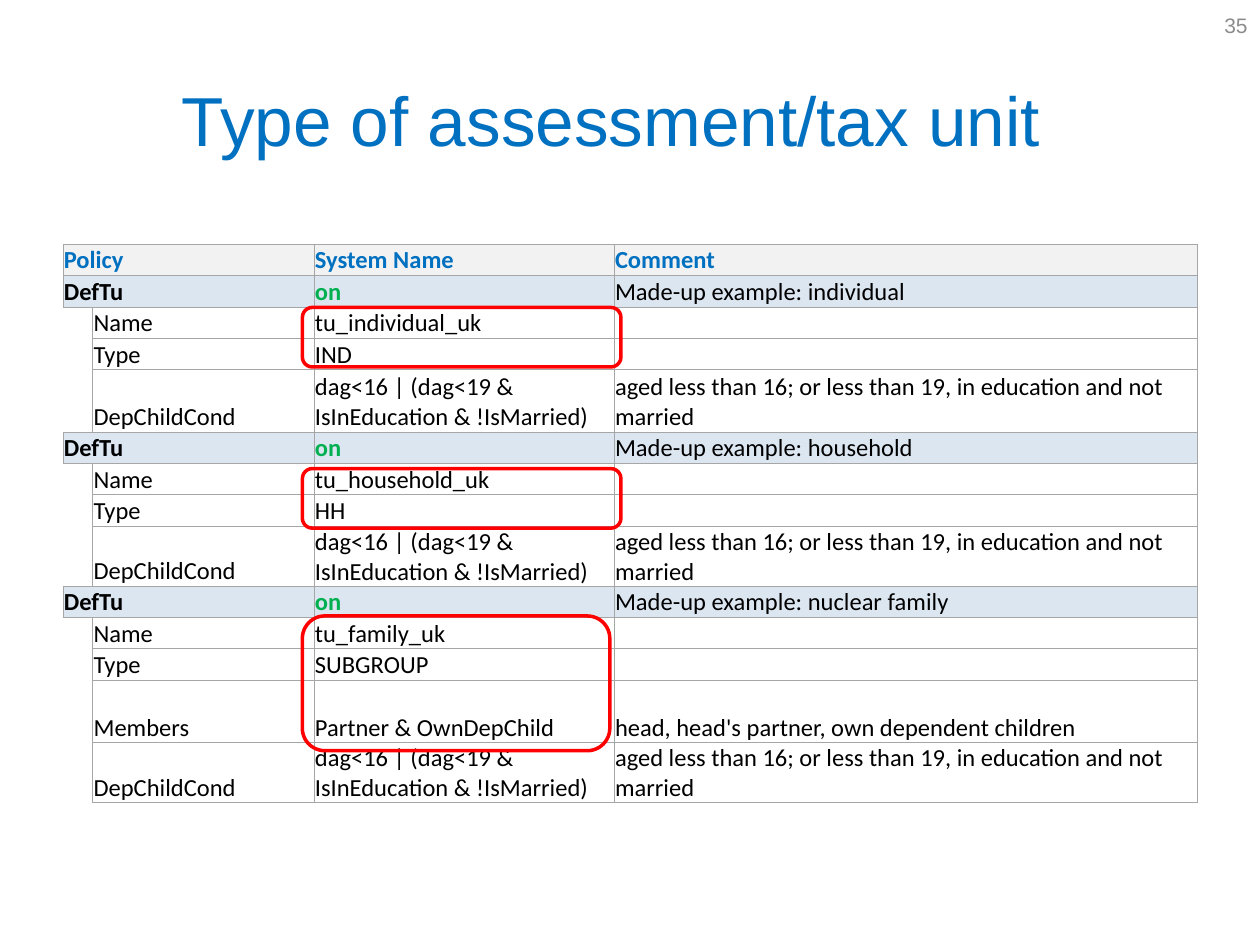
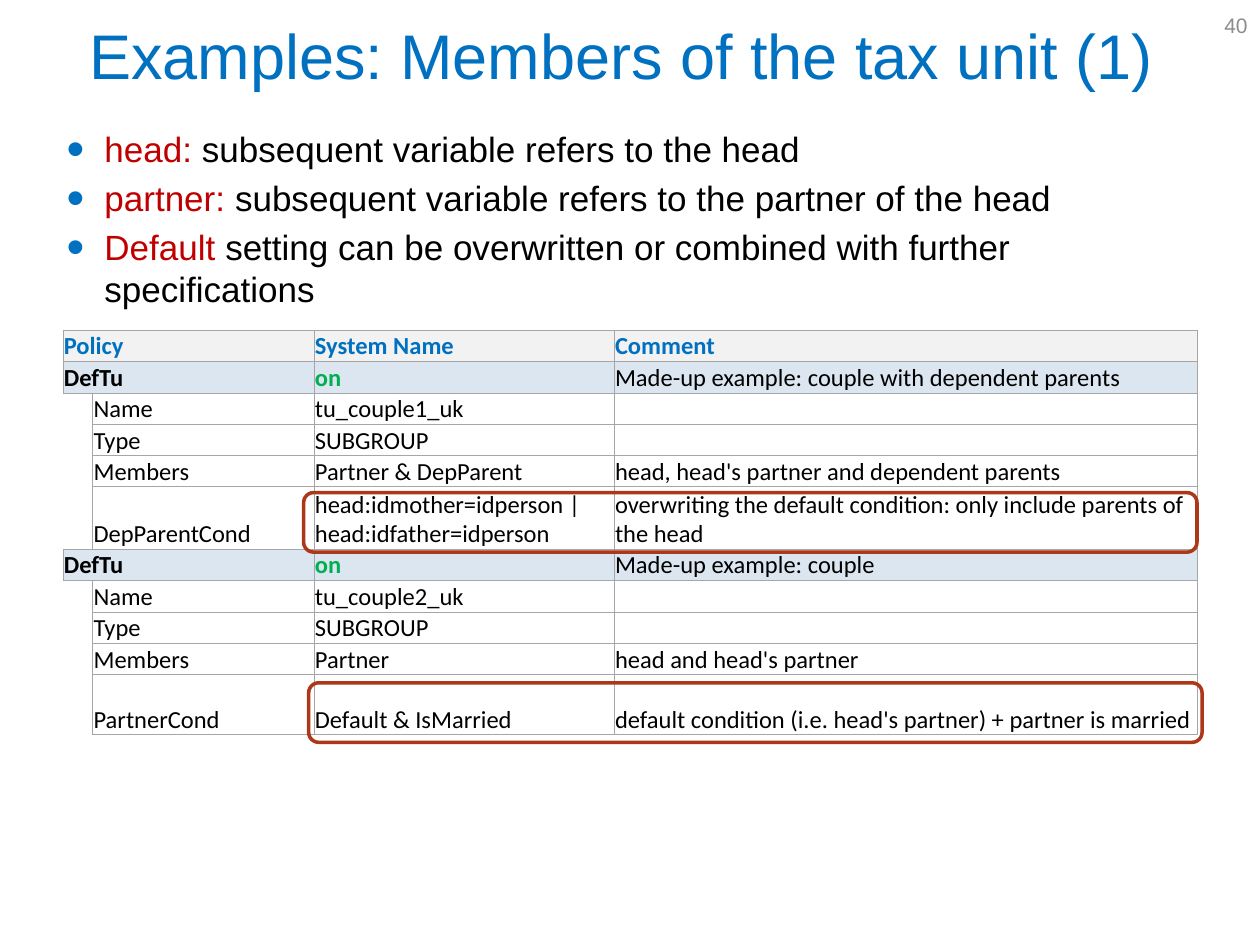
from lxml import etree
from pptx import Presentation
from pptx import util as u
from pptx.dml import color as c
from pptx.enum import shapes, text
from pptx.oxml import ns

Pt = u.Pt

COLORS = {
    "white": "FFFFFF", "black": "000000", "blue": "0070C0", "green": "00B050",
    "grid": "A6A6A6", "head": "F2F2F2", "band": "DCE6F1", "number": "8C8C8C",
    "term": "C00000", "red": "FF0000", "rust": "AC3819",
}
COLUMNS = (17, 126.5, 171.5, 333)
ROW, WRAPPED, TALL = 17.9, 34.3, 35.8
CELL = {"margin_left": Pt(0.5), "margin_right": Pt(0.5),
        "margin_top": Pt(0.5), "margin_bottom": 0}
CENTER, RIGHT = text.PP_ALIGN.CENTER, text.PP_ALIGN.RIGHT
MIDDLE, BOTTOM = text.MSO_ANCHOR.MIDDLE, text.MSO_ANCHOR.BOTTOM


def rgb(name):
    return c.RGBColor.from_string(COLORS[name])


def apply(target, values):
    for name, value in values.items():
        setattr(target, name, value)


class Deck:
    """Shared style plus the slide being filled."""

    def __init__(self):
        self.prs = Presentation()
        self.prs.slide_width, self.prs.slide_height = Pt(720), Pt(540)
        self.s = None

    def run(self, p, words, color, size, font="Arial", bold=False):
        r = p.add_run()
        r.text = words
        apply(r.font, {"name": font, "size": Pt(size), "bold": bold})
        r.font.color.rgb = rgb(color)

    def text_box(self, left, top, width, height, **frame):
        box = self.s.shapes.add_textbox(*map(Pt, (left, top, width, height)))
        apply(box.text_frame, {"word_wrap": True, **frame})
        return box.text_frame

    def slide(self, number, title, box, size):
        self.s = self.prs.slides.add_slide(self.prs.slide_layouts[5])
        # Title
        sp = self.s.shapes.title
        apply(sp, dict(zip(("left", "top", "width", "height"), map(Pt, box))))
        apply(sp.text_frame, {"word_wrap": True, "vertical_anchor": MIDDLE,
                              "auto_size": text.MSO_AUTO_SIZE.NONE})
        p = sp.text_frame.paragraphs[0]
        p.alignment = CENTER
        self.run(p, title, "blue", size)
        # Slide number
        p = self.text_box(552, 0, 168, 29, vertical_anchor=MIDDLE).paragraphs[0]
        p.alignment = RIGHT
        self.run(p, str(number), "number", 12)

    def bullets(self, box, items):
        tf = self.text_box(*box)
        for i, (term, words) in enumerate(items):
            p = tf.add_paragraph() if i else tf.paragraphs[0]
            pPr = p._p.get_or_add_pPr()
            apply_indent = {"marL": Pt(21.6), "indent": -Pt(21.6)}
            for name, value in apply_indent.items():
                pPr.set(name, str(value))
            bu = etree.SubElement(pPr, ns.qn("a:buClr"))
            etree.SubElement(bu, ns.qn("a:srgbClr"), val=COLORS["blue"])
            etree.SubElement(pPr, ns.qn("a:buSzPct"), val="145000")
            etree.SubElement(pPr, ns.qn("a:buFont"), typeface="Arial")
            etree.SubElement(pPr, ns.qn("a:buChar"), char="•")
            p.space_before = Pt(4 if i else 0)
            self.run(p, term + " ", "term", 20)
            self.run(p, words, "black", 20)

    def cell(self, cell, words="", fill="white", color="black", bold=False,
             anchor=BOTTOM, sides="LRTB"):
        apply(cell, {**CELL, "vertical_anchor": anchor})
        # Borders come before the fill in the cell properties
        tcPr = cell._tc.get_or_add_tcPr()
        for side in "LRTB":
            ln = etree.SubElement(tcPr, ns.qn("a:ln" + side), w=str(Pt(0.5)))
            if side in sides:
                paint = etree.SubElement(ln, ns.qn("a:solidFill"))
                etree.SubElement(paint, ns.qn("a:srgbClr"), val=COLORS["grid"])
            else:
                etree.SubElement(ln, ns.qn("a:noFill"))
        cell.fill.solid()
        cell.fill.fore_color.rgb = rgb(fill)
        p = cell.text_frame.paragraphs[0]
        if words:
            self.run(p, words, color, 14, "Calibri", bold)
        else:
            etree.SubElement(p._p, ns.qn("a:endParaRPr"), sz="1400")

    def policy_table(self, top, rows):
        """Rows are (label, value, comment) with an optional height."""
        rows = [("Policy", "System Name", "Comment"), *rows]
        heights = [row[3] if len(row) > 3 else ROW for row in rows]
        table = self.s.shapes.add_table(
            len(rows), len(COLUMNS), Pt(36), Pt(top),
            Pt(sum(COLUMNS)), Pt(sum(heights))).table
        apply(table, {"first_row": False, "horz_banding": False})
        for column, width in zip(table.columns, COLUMNS):
            column.width = Pt(width)
        banded = [row[0] in ("Policy", "DefTu") for row in rows]
        for i, (label, value, comment, *_) in enumerate(rows):
            table.rows[i].height = Pt(heights[i])
            gutter, name, setting, note = table.rows[i].cells
            if banded[i]:
                head = i == 0
                look = {"fill": "head" if head else "band", "anchor": MIDDLE}
                ink = "blue" if head else "black"
                gutter.merge(name)
                self.cell(gutter, label, color=ink, bold=True, **look)
                self.cell(name, **look)
                self.cell(setting, value, color="blue" if head else "green",
                          bold=True, **look)
                self.cell(note, comment, color=ink, bold=head, **look)
            else:
                sides = "R" + "T" * banded[i - 1]
                sides += "B" * (i + 1 < len(rows) and banded[i + 1])
                self.cell(gutter, sides=sides)
                for target, words in zip((name, setting, note),
                                         (label, value, comment)):
                    self.cell(target, words)

    def frame(self, left, top, width, height, color):
        sp = self.s.shapes.add_shape(shapes.MSO_SHAPE.ROUNDED_RECTANGLE,
                                     *map(Pt, (left, top, width, height)))
        sp.shadow.inherit = False
        sp.fill.background()
        sp.line.color.rgb = rgb(color)
        sp.line.width = Pt(2)


def child_condition(height):
    return ("DepChildCond", "dag<16 | (dag<19 & IsInEducation & !IsMarried)",
            "aged less than 16; or less than 19, in education and not married",
            height)


def main():
    d = Deck()

    # Assessment unit types
    d.slide(35, "Type of assessment/tax unit", (25.2, 40.3, 648, 55.4), 39.6)
    d.policy_table(139.7, [
        ("DefTu", "on", "Made-up example: individual"),
        ("Name", "tu_individual_uk", ""),
        ("Type", "IND", ""),
        child_condition(TALL),
        ("DefTu", "on", "Made-up example: household"),
        ("Name", "tu_household_uk", ""),
        ("Type", "HH", ""),
        child_condition(WRAPPED),
        ("DefTu", "on", "Made-up example: nuclear family"),
        ("Name", "tu_family_uk", ""),
        ("Type", "SUBGROUP", ""),
        ("Members", "Partner & OwnDepChild",
         "head, head's partner, own dependent children", TALL),
        child_condition(WRAPPED),
    ])
    for top, width, height in ((267.8, 182, 34), (175.7, 182, 34),
                               (352, 175.7, 77)):
        d.frame(172.8, top, width, height, "red")

    # Members of the unit
    d.slide(40, "Examples: Members of the tax unit (1)",
            (31, 5.8, 648, 51), 36)
    d.bullets((31, 69.4, 664.5, 356.4), [
        ("head:", "subsequent variable refers to the head"),
        ("partner:", "subsequent variable refers to the partner of the head"),
        ("Default", "setting can be overwritten or combined with further "
                    "specifications"),
    ])
    d.policy_table(188.8, [
        ("DefTu", "on", "Made-up example: couple with dependent parents"),
        ("Name", "tu_couple1_uk", ""),
        ("Type", "SUBGROUP", ""),
        ("Members", "Partner & DepParent",
         "head, head's partner and dependent parents"),
        ("DepParentCond", "head:idmother=idperson | head:idfather=idperson",
         "overwriting the default condition: only include parents of the head",
         TALL),
        ("DefTu", "on", "Made-up example: couple"),
        ("Name", "tu_couple2_uk", ""),
        ("Type", "SUBGROUP", ""),
        ("Members", "Partner", "head and head's partner"),
        ("PartnerCond", "Default & IsMarried",
         "default condition (i.e. head's partner) + partner is married",
         WRAPPED),
    ])
    for left, top in ((173.5, 281.5), (176.4, 390.2)):
        d.frame(left, top, 510.5, 34, "rust")

    d.prs.save("out.pptx")


if __name__ == "__main__":
    main()
